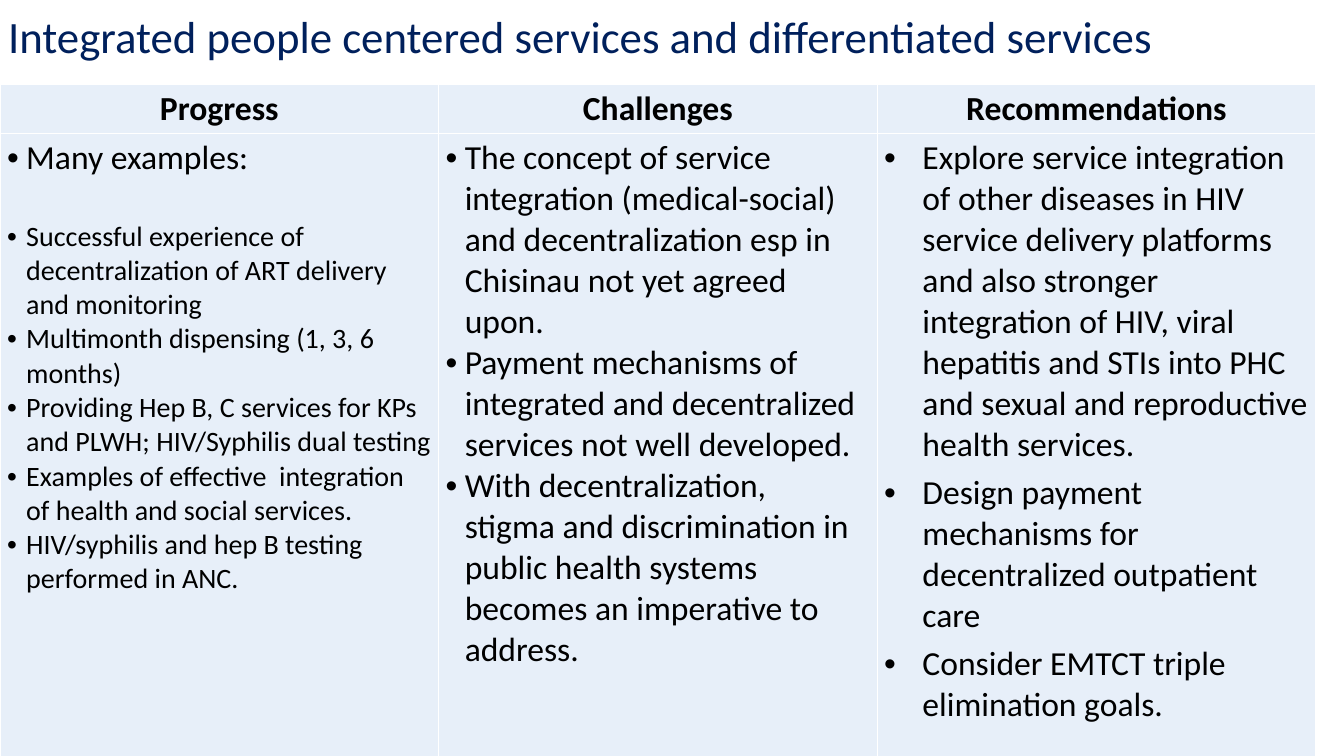
from dataclasses import dataclass

from lxml import etree
from pptx import Presentation
from pptx.dml.color import RGBColor
from pptx.enum.text import MSO_ANCHOR, MSO_AUTO_SIZE, PP_ALIGN
from pptx.oxml.ns import qn
from pptx.util import Inches, Pt

LEFT, CENTER = PP_ALIGN.LEFT, PP_ALIGN.CENTER
TOP, NO_AUTOFIT = MSO_ANCHOR.TOP, MSO_AUTO_SIZE.NONE
TITLE_ONLY = 5


@dataclass(frozen=True)
class Theme:
    font: str = "Calibri"
    navy: RGBColor = RGBColor(0x00, 0x20, 0x5C)
    black: RGBColor = RGBColor(0, 0, 0)
    cell: RGBColor = RGBColor(0xE7, 0xEF, 0xF9)
    title: int = 32
    large: int = 24
    small: int = 20


THEME = Theme()

# Heading, indent in inches, space between items in points, items as (text, size)
COLUMNS = [
    ("Progress", 0.19, 0, [
        ("Many examples:", THEME.large),
        ("Successful experience of decentralization of ART delivery and monitoring", THEME.small),
        ("Multimonth dispensing (1, 3, 6 months)", THEME.small),
        ("Providing Hep B, C services for KPs and PLWH; HIV/Syphilis dual testing", THEME.small),
        ("Examples of effective  integration of health and social services.", THEME.small),
        ("HIV/syphilis and hep B testing performed in ANC.", THEME.small),
    ]),
    ("Challenges", 0.19, 0, [
        ("The concept of service integration (medical-social) and decentralization "
         "esp in Chisinau not yet agreed upon.", THEME.large),
        ("Payment mechanisms of integrated and decentralized services "
         "not well developed.", THEME.large),
        ("With decentralization,  stigma and discrimination in public health systems "
         "becomes an imperative to address.", THEME.large),
    ]),
    ("Recommendations", 0.38, 5, [
        ("Explore service integration of other diseases in HIV service delivery platforms "
         "and also stronger integration of HIV, viral hepatitis and STIs into PHC "
         "and sexual and reproductive health services.", THEME.large),
        ("Design payment mechanisms for decentralized outpatient care", THEME.large),
        ("Consider EMTCT triple elimination goals.", THEME.large),
    ]),
]
LEAD_GAP = 29  # points between the lead line and the smaller examples under it


def write(p, text, size, color=THEME.black, bold=False):
    p.text = text
    font = p.runs[0].font
    font.name, font.size, font.bold = THEME.font, Pt(size), bold
    font.color.rgb = color


def add_bullet(p, indent):
    pPr = p._p.get_or_add_pPr()
    pPr.set("marL", str(Inches(indent)))
    pPr.set("indent", str(-Inches(indent)))
    etree.SubElement(pPr, qn("a:buFont")).set("typeface", "Arial")
    etree.SubElement(pPr, qn("a:buChar")).set("char", "•")


prs = Presentation()
prs.slide_width, prs.slide_height = Inches(13.33), Inches(7.5)
slide = prs.slides.add_slide(prs.slide_layouts[TITLE_ONLY])

# Title
title = slide.shapes.title
title.left, title.top = Inches(0.08), Inches(0.15)
title.width, title.height = Inches(12.33), Inches(1.1)
tf = title.text_frame
tf.margin_left = tf.margin_top = tf.margin_right = tf.margin_bottom = 0
tf.vertical_anchor, tf.auto_size, tf.word_wrap = TOP, NO_AUTOFIT, True
p = tf.paragraphs[0]
write(p, "Integrated people centered services and differentiated services",
      THEME.title, THEME.navy)
p.alignment, p.line_spacing = LEFT, 0.9

# Table
table = slide.shapes.add_table(2, len(COLUMNS), 0, Inches(0.84),
                               Inches(13.05), Inches(6.66)).table
table.first_row = table.horz_banding = False
table.rows[0].height, table.rows[1].height = Inches(0.48), Inches(6.18)

for col, (heading, indent, gap, items) in enumerate(COLUMNS):
    table.columns[col].width = Inches(4.35)
    head, body = table.cell(0, col), table.cell(1, col)
    for cell in (head, body):
        cell.fill.solid()
        cell.fill.fore_color.rgb = THEME.cell
        cell.margin_left = cell.margin_right = Inches(0.07)
        cell.margin_top = cell.margin_bottom = Inches(0.04)

    p = head.text_frame.paragraphs[0]
    write(p, heading, THEME.large, bold=True)
    p.alignment = CENTER

    tf = body.text_frame
    previous = None
    for text, size in items:
        p = tf.add_paragraph() if previous else tf.paragraphs[0]
        write(p, text, size)
        if previous:
            p.space_before = Pt(gap if size == previous else LEAD_GAP)
        add_bullet(p, indent)
        previous = size

prs.save("out.pptx")
